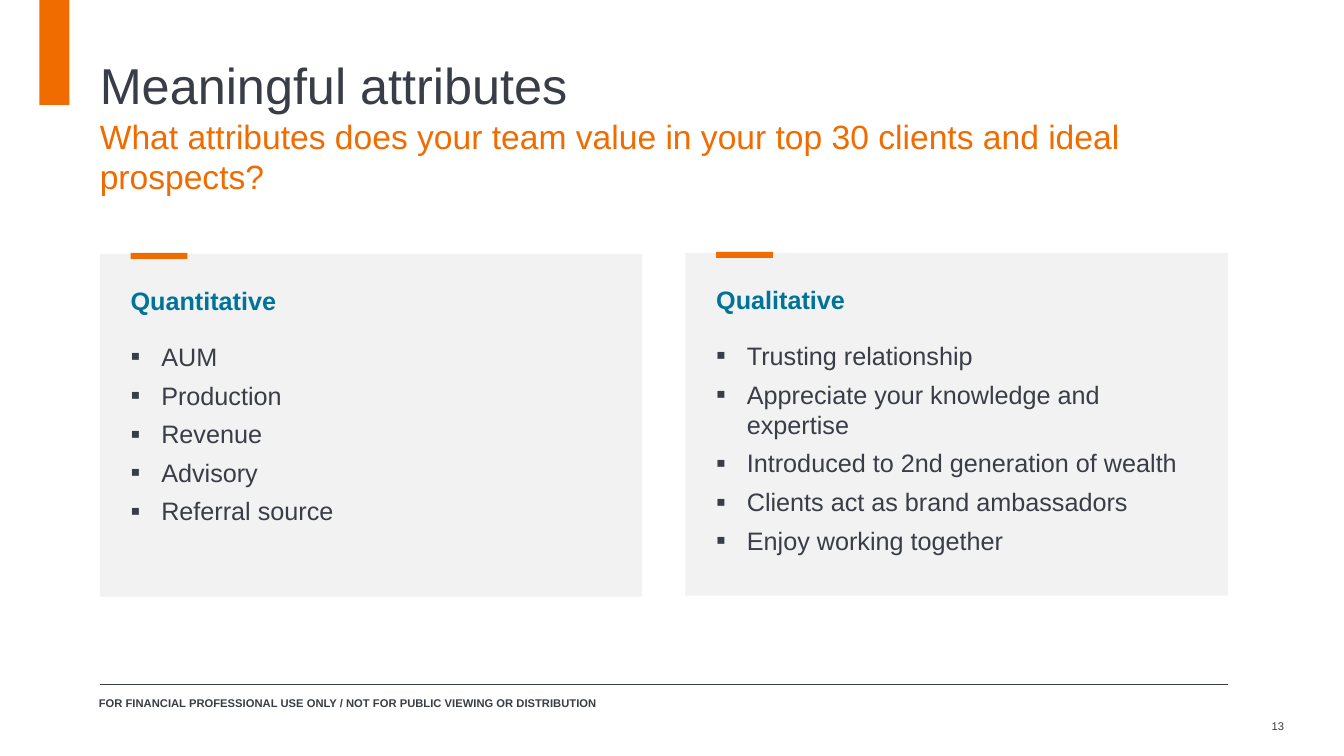
from dataclasses import dataclass
from typing import Any

import lxml.etree
import pptx
import pptx.dml.color
import pptx.enum.shapes
import pptx.enum.text
import pptx.oxml
import pptx.oxml.ns
import pptx.util

Pt = pptx.util.Pt
RGBColor = pptx.dml.color.RGBColor
Anchor = pptx.enum.text.MSO_ANCHOR
Align = pptx.enum.text.PP_ALIGN

INK = RGBColor(0x39, 0x3D, 0x47)
ORANGE = RGBColor(0xF0, 0x6C, 0x00)
TEAL = RGBColor(0x00, 0x73, 0x98)
PALE = RGBColor(0xF2, 0xF2, 0xF2)
WHITE = RGBColor(0xFF, 0xFF, 0xFF)

LEFT = 71.3
WIDTH = 805.7
INDENT = 21.9


@dataclass(frozen=True)
class Area:
    left: float
    top: float
    width: float
    height: float

    def lengths(self) -> list[int]:
        return [Pt(value) for value in (self.left, self.top, self.width, self.height)]


@dataclass(frozen=True)
class TextStyle:
    size: float
    color: RGBColor = INK
    bold: bool = False
    align: Any = Align.LEFT
    anchor: Any = Anchor.TOP
    space_after: float = 0
    bullets: bool = False


@dataclass(frozen=True)
class AttributeCard:
    left: float
    top: float
    list_width: float
    heading: str
    attributes: tuple[str, ...]


CARDS = (
    AttributeCard(71.3, 181.4, 318.2, "Quantitative",
                  ("AUM", "Production", "Revenue", "Advisory", "Referral source")),
    AttributeCard(489.6, 180.7, 343.4, "Qualitative",
                  ("Trusting relationship",
                   "Appreciate your knowledge and expertise",
                   "Introduced to 2nd generation of wealth",
                   "Clients act as brand ambassadors",
                   "Enjoy working together")),
)

HEADING = TextStyle(18, TEAL, bold=True, anchor=Anchor.MIDDLE)
BULLETS = TextStyle(18, space_after=6, bullets=True)


def set_values(target: Any, values: dict[str, Any]) -> None:
    for name, value in values.items():
        setattr(target, name, value)


def add_bullet(para: Any) -> None:
    properties = para._p.get_or_add_pPr()
    properties.set("marL", str(Pt(INDENT)))
    properties.set("indent", str(-Pt(INDENT)))
    namespace = pptx.oxml.ns.nsdecls("a")
    for markup in (
        f'<a:buClr {namespace}><a:srgbClr val="{INK}"/></a:buClr>',
        f'<a:buSzPct {namespace} val="110000"/>',
        f'<a:buFont {namespace} typeface="Arial"/>',
        f'<a:buChar {namespace} char="▪"/>',
    ):
        properties.append(pptx.oxml.parse_xml(markup))


def write_text(box: Any, area: Area, lines: tuple[str, ...], style: TextStyle) -> None:
    set_values(box, dict(zip(("left", "top", "width", "height"), area.lengths())))
    frame = box.text_frame
    set_values(frame, {
        "word_wrap": True, "auto_size": pptx.enum.text.MSO_AUTO_SIZE.NONE,
        "vertical_anchor": style.anchor, "margin_left": 0, "margin_right": 0,
        "margin_top": 0, "margin_bottom": 0,
    })
    for index, line in enumerate(lines):
        para = frame.paragraphs[0] if index == 0 else frame.add_paragraph()
        if style.bullets:
            add_bullet(para)
        set_values(para, {"alignment": style.align, "space_after": Pt(style.space_after)})
        span = para.add_run()
        span.text = line
        set_values(span.font, {"name": "Arial", "size": Pt(style.size), "bold": style.bold})
        span.font.color.rgb = style.color


def add_text(page: Any, area: Area, lines: tuple[str, ...], style: TextStyle) -> None:
    write_text(page.shapes.add_textbox(*area.lengths()), area, lines, style)


def add_block(page: Any, area: Area, color: RGBColor) -> None:
    block = page.shapes.add_shape(pptx.enum.shapes.MSO_SHAPE.RECTANGLE, *area.lengths())
    block.shadow.inherit = False
    block.fill.solid()
    block.fill.fore_color.rgb = color
    block.line.fill.background()


def add_rule(page: Any, left: float, top: float, width: float) -> None:
    rule = page.shapes.add_connector(
        pptx.enum.shapes.MSO_CONNECTOR.STRAIGHT,
        Pt(left), Pt(top), Pt(left + width), Pt(top))
    rule.line.color.rgb = INK
    rule.line.width = Pt(0.5)
    lxml.etree.SubElement(rule._element.spPr, pptx.oxml.ns.qn("a:effectLst"))


def add_card(page: Any, card: AttributeCard) -> None:
    inner = card.left + 22
    add_block(page, Area(card.left, card.top, 387.4, 244.8), PALE)
    add_text(page, Area(inner, card.top + 22.3, 150.5, 21.6), (card.heading,), HEADING)
    add_block(page, Area(inner, card.top - 0.7, 40.5, 4.3), ORANGE)
    add_text(page, Area(inner, card.top + 62.3, card.list_width, 193), card.attributes, BULLETS)


def main() -> None:
    deck = pptx.Presentation()
    set_values(deck, {"slide_width": Pt(960), "slide_height": Pt(540)})
    page = deck.slides.add_slide(deck.slide_layouts.get_by_name("Title Only"))
    page.background.fill.solid()
    page.background.fill.fore_color.rgb = WHITE

    add_block(page, Area(28.1, 0, 21.6, 74.9), ORANGE)
    write_text(page.shapes.title, Area(LEFT, 31, WIDTH, 51.1),
               ("Meaningful attributes",), TextStyle(36, anchor=Anchor.BOTTOM))
    add_text(page, Area(LEFT, 82.8, WIDTH, 26.6),
             ("What attributes does your team value in your top 30 clients and ideal prospects?",),
             TextStyle(24, ORANGE, space_after=6))
    for card in CARDS:
        add_card(page, card)
    add_rule(page, LEFT, 488.9, WIDTH)
    add_text(page, Area(70.6, 497.5, 811.4, 10),
             ("FOR FINANCIAL PROFESSIONAL USE ONLY / NOT FOR PUBLIC VIEWING OR DISTRIBUTION",),
             TextStyle(8, bold=True))
    add_text(page, Area(880.6, 504, 36.7, 28.8), ("13",),
             TextStyle(8, align=Align.RIGHT, anchor=Anchor.MIDDLE))
    deck.save("out.pptx")


if __name__ == "__main__":
    main()
